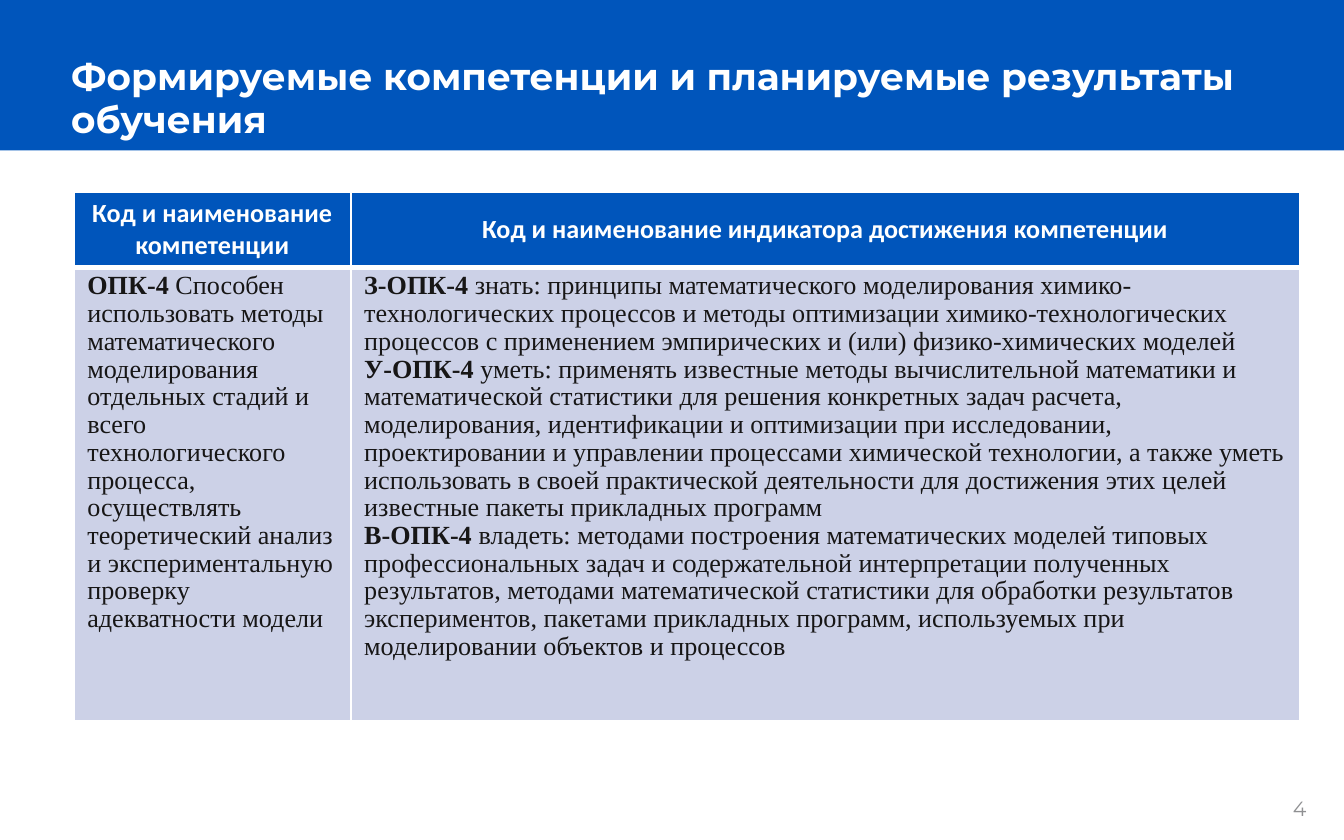
from lxml.etree import SubElement
from pptx import Presentation
from pptx.dml.color import RGBColor
from pptx.enum.shapes import MSO_SHAPE
from pptx.enum.text import MSO_ANCHOR, MSO_AUTO_SIZE, PP_ALIGN
from pptx.oxml.ns import qn
from pptx.util import Inches, Pt

BLUE = RGBColor(0x00, 0x55, 0xBB)
WHITE = RGBColor(0xFF, 0xFF, 0xFF)
LAVENDER = RGBColor(0xCC, 0xD1, 0xE7)
INK = RGBColor(0x17, 0x16, 0x16)
GREY = RGBColor(0x8F, 0x90, 0x92)

# Content
TITLE = "Формируемые компетенции и планируемые результаты обучения"
PAGE_NUMBER = "4"
HEADERS = ["Код и наименование компетенции",
           "Код и наименование индикатора достижения компетенции"]
# One list per column; each paragraph is a bold code and its description
BODY = [
    [("ОПК-4", " Способен использовать методы математического моделирования отдельных "
      "стадий и всего технологического процесса, осуществлять теоретический анализ и "
      "экспериментальную проверку адекватности модели")],
    [("З-ОПК-4 ", "знать: принципы математического моделирования химико-технологических "
      "процессов и методы оптимизации химико-технологических процессов с применением "
      "эмпирических и (или) физико-химических моделей"),
     ("У-ОПК-4 ", "уметь: применять известные методы вычислительной математики и "
      "математической статистики для решения конкретных задач расчета, моделирования, "
      "идентификации и оптимизации при исследовании, проектировании и управлении "
      "процессами химической технологии, а также уметь использовать в своей практической "
      "деятельности для достижения этих целей известные пакеты прикладных программ"),
     ("В-ОПК-4 ", "владеть: методами построения математических моделей типовых "
      "профессиональных задач и содержательной интерпретации полученных результатов, "
      "методами математической статистики для обработки результатов экспериментов, "
      "пакетами прикладных программ, используемых при моделировании объектов и процессов")],
]

# Layout in inches
SLIDE_WIDTH, SLIDE_HEIGHT = 10, 6.25
BAND_HEIGHT = 1.12
TABLE_LEFT, TABLE_TOP = 0.55, 1.43
COLUMN_WIDTHS = [2.06, 7.06]
ROW_HEIGHTS = [0.56, 3.37]


def style_run(run, font_name, size, color, bold=False):
    run.font.name = font_name
    run.font.size = Pt(size)
    run.font.color.rgb = color
    run.font.bold = bold


def set_insets(text_frame):
    text_frame.margin_left = text_frame.margin_right = Inches(0.07)
    text_frame.margin_top = text_frame.margin_bottom = Inches(0.04)


def style_cell(cell, fill, bottom_width, top_width):
    """Set margins, white borders and fill; borders must precede the fill."""
    cell.margin_left = cell.margin_right = Inches(0.1)
    cell.margin_top = cell.margin_bottom = Inches(0.04)
    properties = cell._tc.get_or_add_tcPr()
    for side, width in (("L", 1), ("R", 1), ("T", top_width), ("B", bottom_width)):
        border = SubElement(properties, qn(f"a:ln{side}"), w=str(Pt(width)))
        color = SubElement(SubElement(border, qn("a:solidFill")), qn("a:srgbClr"))
        color.set("val", str(WHITE))
    cell.fill.solid()
    cell.fill.fore_color.rgb = fill


presentation = Presentation()
presentation.slide_width = Inches(SLIDE_WIDTH)
presentation.slide_height = Inches(SLIDE_HEIGHT)
slide = presentation.slides.add_slide(presentation.slide_layouts[5])

# Header band, placed behind the title
band = slide.shapes.add_shape(MSO_SHAPE.RECTANGLE, 0, 0,
                              Inches(SLIDE_WIDTH), Inches(BAND_HEIGHT))
band.shadow.inherit = False
band.fill.solid()
band.fill.fore_color.rgb = BLUE
band.line.fill.background()
slide.shapes._spTree.insert(2, band._element)

# Title
title = slide.shapes.title
title.left, title.top, title.width, title.height = map(Inches, (0.46, 0.36, 9.09, 0.75))
title_frame = title.text_frame
title_frame.text = TITLE
title_frame.auto_size = MSO_AUTO_SIZE.NONE
title_frame.vertical_anchor = MSO_ANCHOR.MIDDLE
set_insets(title_frame)
title_paragraph = title_frame.paragraphs[0]
title_paragraph.alignment = PP_ALIGN.LEFT
title_paragraph.line_spacing = 0.97
style_run(title_paragraph.runs[0], "Montserrat", 20, WHITE, bold=True)

# Competence table
table = slide.shapes.add_table(
    len(ROW_HEIGHTS), len(COLUMN_WIDTHS), Inches(TABLE_LEFT), Inches(TABLE_TOP),
    Inches(sum(COLUMN_WIDTHS)), Inches(sum(ROW_HEIGHTS))).table
for row, height in zip(table.rows, ROW_HEIGHTS):
    row.height = Inches(height)

for index, (width, header, items) in enumerate(zip(COLUMN_WIDTHS, HEADERS, BODY)):
    table.columns[index].width = Inches(width)

    header_cell = table.cell(0, index)
    style_cell(header_cell, BLUE, bottom_width=3, top_width=1)
    header_cell.vertical_anchor = MSO_ANCHOR.MIDDLE
    header_cell.text_frame.text = header
    paragraph = header_cell.text_frame.paragraphs[0]
    paragraph.alignment = PP_ALIGN.CENTER
    style_run(paragraph.runs[0], "Calibri", 14, WHITE, bold=True)

    body_cell = table.cell(1, index)
    style_cell(body_cell, LAVENDER, bottom_width=1, top_width=3)
    body_frame = body_cell.text_frame
    for number, item in enumerate(items):
        paragraph = body_frame.add_paragraph() if number else body_frame.paragraphs[0]
        paragraph.line_spacing = 0.96
        for text, bold in zip(item, (True, False)):
            run = paragraph.add_run()
            run.text = text
            style_run(run, "Times New Roman", 14, INK, bold)

# Page number
page_box = slide.shapes.add_textbox(*map(Inches, (9.55, 5.88, 0.35, 0.26)))
page_frame = page_box.text_frame
page_frame.text = PAGE_NUMBER
page_frame.word_wrap = True
set_insets(page_frame)
style_run(page_frame.paragraphs[0].runs[0], "Montserrat", 11, GREY)

presentation.save("out.pptx")
